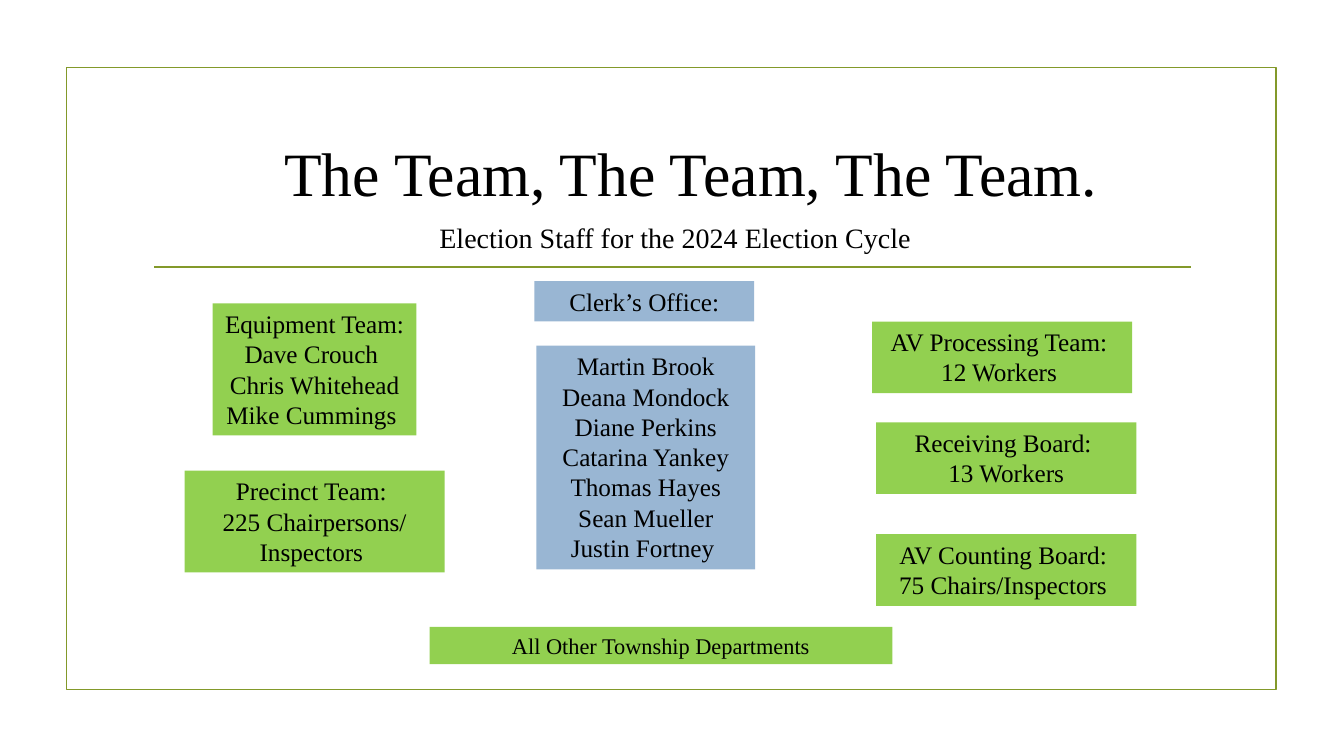
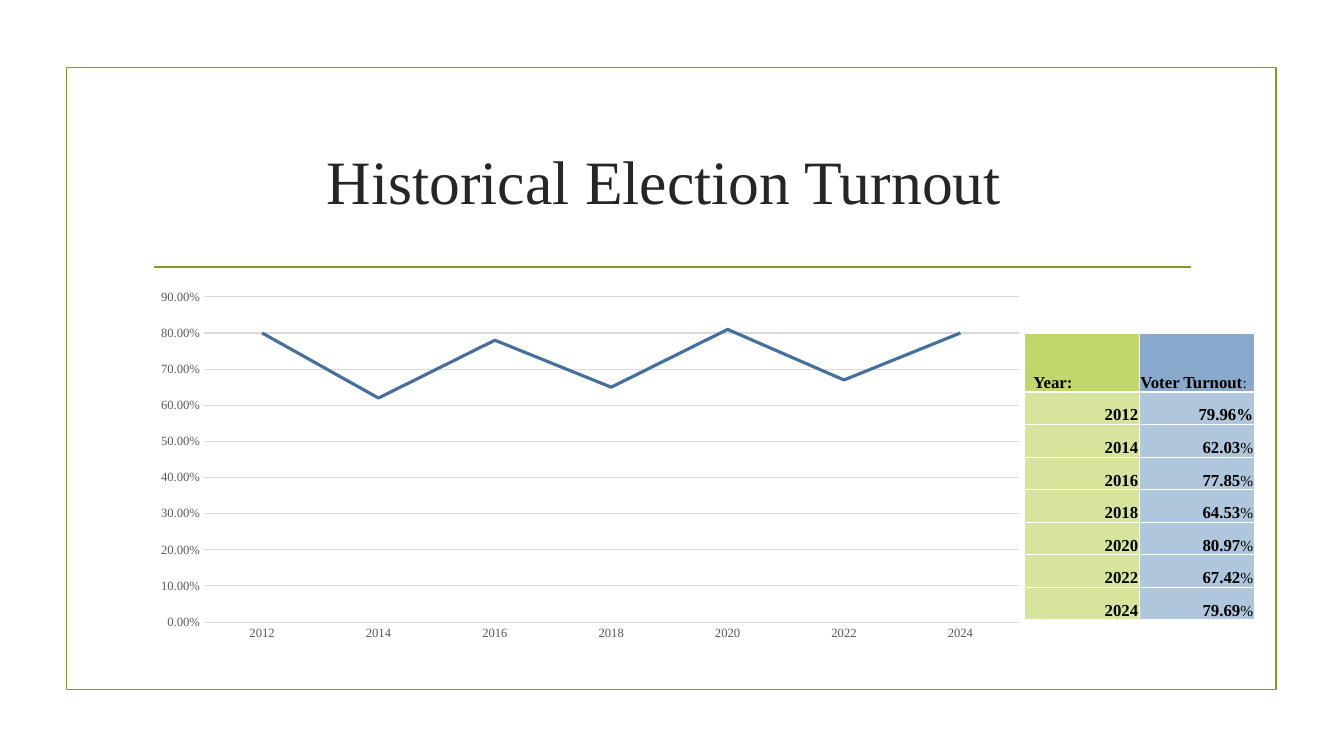
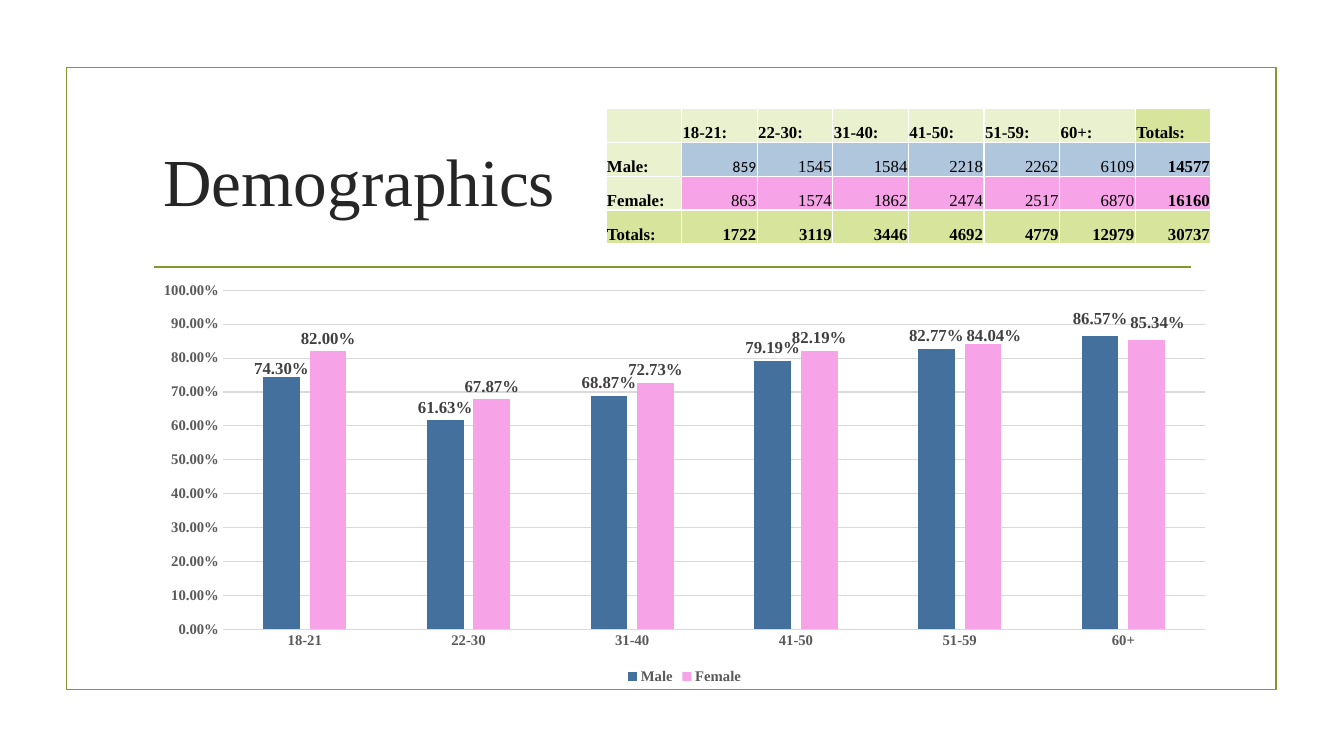
from dataclasses import dataclass

from lxml import etree
from pptx import Presentation
from pptx import util as u
from pptx.chart.data import CategoryChartData
from pptx.dml.color import RGBColor
from pptx.enum import chart as charts, shapes, text
from pptx.oxml import parse_xml
from pptx.oxml.ns import nsdecls, qn

PX = 9144  # 100 px to the inch
LEFT, CENTER, RIGHT = text.PP_ALIGN.LEFT, text.PP_ALIGN.CENTER, text.PP_ALIGN.RIGHT


@dataclass(frozen=True)
class Theme:
    font: str = "Times New Roman"
    alt_font: str = "Calibri"
    black: str = "000000"
    title: str = "262626"
    white: str = "FFFFFF"
    olive: str = "83992A"
    green_card: str = "92D050"
    blue_card: str = "99B6D3"
    green_head: str = "C1D66B"
    green_cell: str = "D6E49C"
    green_pale: str = "EAF1CE"
    blue_head: str = "88A9CB"
    blue_cell: str = "AFC6DD"
    pink: str = "F7A3E7"
    blue_series: str = "44709D"
    axis_text: str = "595959"
    label_text: str = "404040"
    grid: str = "D9D9D9"
    title_size: float = 44
    big_title_size: float = 48
    subtitle_size: float = 20
    card_size: float = 18
    note_size: float = 16
    cell_size: float = 12
    small_size: float = 11
    chart_size: float = 10
    axis_size: float = 9
    bold_axis_size: float = 10.5
    rule_width: float = 1.25


THEME = Theme()


@dataclass
class Cell:
    text: str
    fill: str
    bold: bool = True
    align: int = RIGHT
    tail: str = ""  # smaller regular text after the main text
    size: float = THEME.cell_size
    font: str = THEME.font
    indent: int = 1


def px(*lengths):
    return [u.Emu(round(length * PX)) for length in lengths]


def rgb(colour):
    return RGBColor.from_string(colour)


def style(font, size, colour=THEME.black, bold=False, name=THEME.font):
    font.name, font.size, font.bold = name, u.Pt(size), bold
    font.color.rgb = rgb(colour)


def stroke(line, colour, width):
    line.color.rgb = rgb(colour)
    line.width = u.Pt(width)


def add_slide(deck, title, box, size=THEME.title_size, colour=THEME.title):
    """Add a titled slide with the shared frame and rule."""
    slide = deck.slides.add_slide(deck.slide_layouts[5])
    holder = slide.shapes.title
    holder.left, holder.top, holder.width, holder.height = px(*box)
    frame = holder.text_frame
    frame.text = title
    frame.auto_size = text.MSO_AUTO_SIZE.NONE
    frame.vertical_anchor = text.MSO_ANCHOR.MIDDLE
    frame.paragraphs[0].alignment = CENTER
    style(frame.paragraphs[0].font, size, colour)

    border = slide.shapes.add_shape(shapes.MSO_SHAPE.RECTANGLE, *px(66, 67, 1200, 617))
    border.shadow.inherit = False
    border.fill.background()
    stroke(border.line, THEME.olive, THEME.rule_width)
    rule = slide.shapes.add_connector(shapes.MSO_CONNECTOR.STRAIGHT, *px(153, 265, 1181, 265))
    etree.SubElement(rule._element.spPr, qn("a:effectLst"))
    stroke(rule.line, THEME.olive, THEME.rule_width)
    return slide


def add_text(slide, box, lines, fill=None, size=THEME.card_size, align=CENTER):
    shape = slide.shapes.add_textbox(*px(*box))
    if fill:
        shape.fill.solid()
        shape.fill.fore_color.rgb = rgb(fill)
    frame = shape.text_frame
    frame.word_wrap = True
    frame.auto_size = text.MSO_AUTO_SIZE.SHAPE_TO_FIT_TEXT
    frame.text = "\n".join(lines)
    for para in frame.paragraphs:
        para.alignment = align
        style(para.font, size)


def add_borders(cell):
    for side in "LRTB":
        cell._tc.get_or_add_tcPr().append(parse_xml(
            f'<a:ln{side} {nsdecls("a")} w="12700"><a:solidFill>'
            f'<a:srgbClr val="{THEME.white}"/></a:solidFill></a:ln{side}>'))


def fill_cell(cell, content):
    add_borders(cell)
    cell.fill.solid()
    cell.fill.fore_color.rgb = rgb(content.fill)
    cell.vertical_anchor = text.MSO_ANCHOR.BOTTOM
    cell.margin_left, cell.margin_right, cell.margin_top, cell.margin_bottom = px(
        content.indent, 1, 1, 0)
    para = cell.text_frame.paragraphs[0]
    para.alignment = content.align
    style(para.font, content.size, bold=content.bold, name=content.font)
    if content.text:
        para.add_run().text = content.text
    if content.tail:
        tail = para.add_run()
        tail.text = content.tail
        tail.font.size, tail.font.bold = u.Pt(THEME.small_size), False


def add_table(slide, box, rows, head_height):
    """Add a table whose rows below the head share the remaining height."""
    left, top, width, height = box
    table = slide.shapes.add_table(len(rows), len(rows[0]), *px(*box)).table
    table.first_row = table.horz_banding = False
    for column in table.columns:
        column.width, = px(width / len(rows[0]))
    for row in table.rows:
        row.height, = px((height - head_height) / (len(rows) - 1))
    table.rows[0].height, = px(head_height)
    for i, row in enumerate(rows):
        for j, content in enumerate(row):
            fill_cell(table.cell(i, j), content)


def add_chart(slide, kind, box, categories, series, top_value, size, bold=False):
    data = CategoryChartData(number_format="0.00%")
    data.categories = categories
    for name, values in series:
        data.add_series(name, values)
    chart = slide.shapes.add_chart(kind, *px(*box), data).chart
    chart.has_title = chart.has_legend = False
    style(chart.font, THEME.chart_size)
    values_axis = chart.value_axis
    values_axis.minimum_scale, values_axis.maximum_scale = 0, top_value
    values_axis.major_unit = 0.1
    values_axis.tick_labels.number_format = "0.00%"
    values_axis.tick_labels.number_format_is_linked = False
    values_axis.has_major_gridlines = True
    stroke(values_axis.major_gridlines.format.line, THEME.grid, 0.75)
    values_axis.format.line.fill.background()
    stroke(chart.category_axis.format.line, THEME.grid, 0.75)
    for axis in (values_axis, chart.category_axis):
        axis.major_tick_mark = axis.minor_tick_mark = charts.XL_TICK_MARK.NONE
        style(axis.tick_labels.font, size, THEME.axis_text, bold)
    chart.plots[0].vary_by_categories = False
    return chart


def label_bars(series, nudges):
    """Label every bar; nudges maps a point to its label's shift in chart fractions."""
    labels = series.data_labels
    labels.show_value = True
    labels.number_format, labels.number_format_is_linked = "0.00%", False
    labels.position = charts.XL_LABEL_POSITION.OUTSIDE_END
    style(labels.font, THEME.cell_size, THEME.label_text, True)
    for index, (x, y) in nudges.items():
        label = series.points[index].data_label
        style(label.font, THEME.cell_size, THEME.label_text, True)
        label.position = charts.XL_LABEL_POSITION.OUTSIDE_END
        label._get_or_add_dLbl().find(qn("c:idx")).addnext(parse_xml(
            f'<c:layout {nsdecls("c")}><c:manualLayout>'
            f'<c:x val="{x}"/><c:y val="{y}"/></c:manualLayout></c:layout>'))


def build_team(deck):
    slide = add_slide(deck, "The Team, The Team, The Team.", (117, 107, 1137, 126),
                      colour=THEME.black)
    add_text(slide, (426, 214, 790, 44), ["Election Staff for the 2024 Election Cycle"],
             size=THEME.subtitle_size, align=LEFT)
    green, blue = THEME.green_card, THEME.blue_card
    staff = ["Martin Brook", "Deana Mondock", "Diane Perkins", "Catarina Yankey",
             "Thomas Hayes", "Sean Mueller", "Justin Fortney "]
    equipment = ["Equipment Team:", "Dave Crouch ", "Chris Whitehead", "Mike Cummings "]
    for box, lines, fill in [
        ((530, 279, 218, 40), ["Clerk’s Office:"], blue),
        ((532, 343, 217, 222), staff, blue),
        ((211, 301, 202, 131), equipment, green),
        ((183, 467, 258, 101), ["Precinct Team: ", "225 Chairpersons/", "Inspectors "], green),
        ((865, 319, 258, 71), ["AV Processing Team: ", "12 Workers "], green),
        ((869, 419, 258, 71), ["Receiving Board: ", "13 Workers"], green),
        ((869, 530, 258, 71), ["AV Counting Board: ", "75 Chairs/Inspectors "], green),
    ]:
        add_text(slide, box, lines, fill)
    add_text(slide, (426, 622, 459, 37), ["All Other Township Departments"], green,
             THEME.note_size)


def build_turnout(deck):
    slide = add_slide(deck, "Historical Election Turnout", (134, 107, 1050, 143))
    turnout = {"2012": 79.96, "2014": 62.03, "2016": 77.85, "2018": 64.53,
               "2020": 80.97, "2022": 67.42, "2024": 79.69}
    shares = [round(percent / 100, 2) for percent in turnout.values()]
    chart = add_chart(slide, charts.XL_CHART_TYPE.LINE, (142, 280, 886, 363), list(turnout),
                      [("Series 1", shares)], 0.9, THEME.axis_size)
    line = chart.plots[0].series[0]
    line.smooth = False
    line.marker.style = charts.XL_MARKER_STYLE.NONE
    stroke(line.format.line, THEME.blue_series, 2.25)

    rows = [[Cell("Year:", THEME.green_head, align=LEFT, indent=9),
             Cell("Voter Turnout", THEME.blue_head, align=LEFT, tail=":")]]
    for year, percent in turnout.items():
        rows.append([Cell(year, THEME.green_cell),
                     Cell(f"{percent:.2f}", THEME.blue_cell, tail="%")])
    rows[1][1] = Cell("79.96%", THEME.blue_cell)
    add_table(slide, (1016, 331, 228, 284), rows, head_height=58)


def build_demographics(deck):
    slide = add_slide(deck, "Demographics", (108, 107, 497, 143), THEME.big_title_size)
    ages = ["18-21", "22-30", "31-40", "41-50", "51-59", "60+"]
    male = [859, 1545, 1584, 2218, 2262, 6109]
    female = [863, 1574, 1862, 2474, 2517, 6870]
    totals = [sum(pair) for pair in zip(male, female)]

    pale, total_fill = THEME.green_pale, THEME.green_cell
    rows = [[Cell(label, pale, align=LEFT) for label in ["", *(f"{age}:" for age in ages)]]
            + [Cell("Totals:", total_fill, align=LEFT)]]
    for label, counts, head_fill, fill, bold in [
        ("Male:", male, pale, THEME.blue_cell, False),
        ("Female:", female, pale, THEME.pink, False),
        ("Totals:", totals, total_fill, total_fill, True),
    ]:
        rows.append([Cell(label, head_fill, align=LEFT),
                     *(Cell(str(count), fill, bold) for count in counts),
                     Cell(str(sum(counts)), fill)])
    rows[1][1].font, rows[1][1].size = THEME.alt_font, THEME.small_size
    add_table(slide, (601, 108, 600, 134), rows, head_height=33.5)

    chart = add_chart(
        slide, charts.XL_CHART_TYPE.COLUMN_CLUSTERED, (141, 272, 1076, 411), ages,
        [("Male", [0.743, 0.6163, 0.6887, 0.7919, 0.8277, 0.8657]),
         ("Female", [0.82, 0.6787, 0.7273, 0.8219, 0.8404, 0.8534])],
        1, THEME.bold_axis_size, bold=True)
    plot = chart.plots[0]
    plot.gap_width, plot.overlap = 219, -27
    nudges = [{0: (0, 0.01), 5: (0, -0.01)}, {4: (0.01, 0.01), 5: (0.01, -0.01)}]
    for bars, colour, shifts in zip(plot.series, (THEME.blue_series, THEME.pink), nudges):
        bars.format.fill.solid()
        bars.format.fill.fore_color.rgb = rgb(colour)
        label_bars(bars, shifts)
    chart.has_legend = True
    chart.legend.position = charts.XL_LEGEND_POSITION.BOTTOM
    chart.legend.include_in_layout = False
    style(chart.legend.font, THEME.bold_axis_size, THEME.axis_text, True)


def main():
    deck = Presentation()
    deck.slide_width, deck.slide_height = px(1333, 750)
    build_team(deck)
    build_turnout(deck)
    build_demographics(deck)
    deck.save("out.pptx")


if __name__ == "__main__":
    main()
